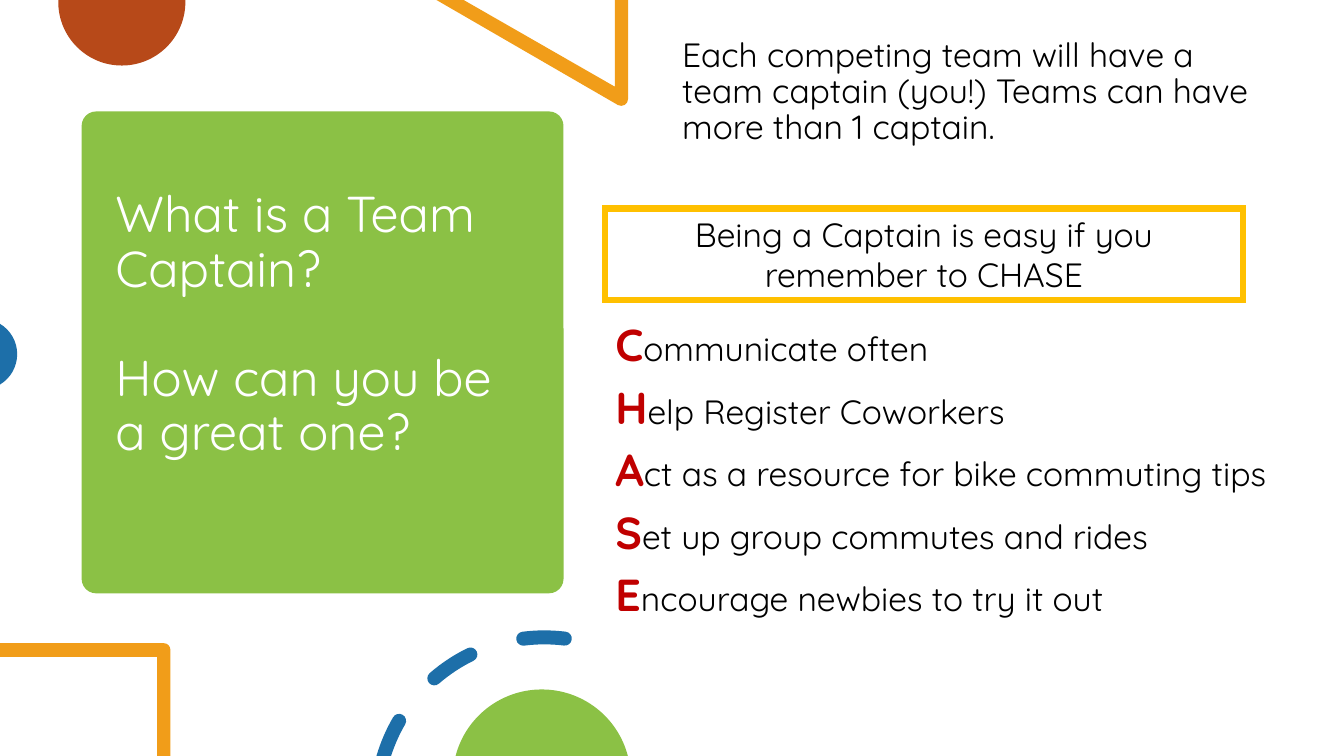
from dataclasses import dataclass
from math import cos, radians, sin, tan

from lxml import etree
from pptx import Presentation
from pptx.dml.color import RGBColor
from pptx.enum.shapes import MSO_SHAPE
from pptx.enum.text import MSO_ANCHOR, PP_ALIGN
from pptx.oxml.ns import qn
from pptx.util import Pt

RECT = MSO_SHAPE.RECTANGLE
ROUND = MSO_SHAPE.ROUNDED_RECTANGLE
TOP = MSO_ANCHOR.TOP
MIDDLE = MSO_ANCHOR.MIDDLE
CENTER = PP_ALIGN.CENTER


@dataclass(frozen=True)
class Theme:
    font: str = "Quicksand"
    green: str = "8BC145"
    rust: str = "B74919"
    orange: str = "F19D19"
    blue: str = "1D6FA9"
    gold: str = "FFC000"
    red: str = "C00000"
    white: str = "FFFFFF"
    black: str = "000000"
    title: int = 36
    cap: int = 32
    body: int = 24


THEME = Theme()
WIDE, HIGH = 960, 540
STEPS = [
    "Communicate often",
    "Help Register Coworkers",
    "Act as a resource for bike commuting tips",
    "Set up group commutes and rides",
    "Encourage newbies to try it out",
]


def rgb(color):
    return RGBColor.from_string(color)


def paint(shape, fill, line=None, width=0):
    shape.shadow.inherit = False
    shape.fill.solid()
    shape.fill.fore_color.rgb = rgb(fill)
    if line:
        shape.line.color.rgb = rgb(line)
        shape.line.width = Pt(width)
    else:
        shape.line.fill.background()


def style(font, size, color, bold=False):
    font.name = THEME.font
    font.size = Pt(size)
    font.bold = bold
    font.color.rgb = rgb(color)


def frame(slide, box, anchor=TOP):
    text = slide.shapes.add_textbox(*map(Pt, box)).text_frame
    text.word_wrap = True
    text.vertical_anchor = anchor
    return text


def spot(x, y, r, turn):
    return x + r * cos(radians(turn)), y + r * sin(radians(turn))


def arc(x, y, r, start, end, count=1):
    step = (end - start) / count
    pull = 4 / 3 * tan(radians(step / 4)) * r
    curves = []
    for i in range(count):
        a = start + i * step
        b = a + step
        (ax, ay), (bx, by) = spot(x, y, r, a), spot(x, y, r, b)
        (ux, uy), (vx, vy) = spot(0, 0, pull, a + 90), spot(0, 0, pull, b + 90)
        curves.append((ax + ux, ay + uy, bx - vx, by - vy, bx, by))
    return curves


def bend(node, curve):
    tag = etree.Element(qn("a:cubicBezTo"))
    node.addprevious(tag)
    for line in curve:
        tag.append(line[0])
        line.getparent().remove(line)


def outline(slide, box, loops, fill):
    left, top = box[:2]
    pen = None
    kinds = []
    for loop in loops:
        first, *rest = loop
        x, y = Pt(left + first[0]), Pt(top + first[1])
        if pen:
            pen.move_to(x, y)
        else:
            pen = slide.shapes.build_freeform(x, y)
        dots = []
        for part in rest:
            pairs = list(zip(part[::2], part[1::2]))
            kinds.append(len(pairs))
            dots += [(Pt(left + px), Pt(top + py)) for px, py in pairs]
        pen.add_line_segments(dots, close=True)
    shape = pen.convert_to_shape()
    paint(shape, fill)
    lines = list(shape.element.iter(qn("a:lnTo")))
    for kind in kinds:
        batch, lines = lines[:kind], lines[kind:]
        if kind == 3:
            bend(batch[0], batch)


def dash(x, y, r, half, start, end, cut=None):
    loop = [spot(x, y, r + half, start)]
    loop += arc(x, y, r + half, start, end)
    loop += arc(*spot(x, y, r, end), half, end, end + 180, 2)
    loop += arc(x, y, r - half, end, cut or start)
    if cut is None:
        loop += arc(*spot(x, y, r, start), half, start + 180, start + 360, 2)
    return loop


def decor(slide, box):
    h = box[3]
    disc = [(132.4, 0), (41.6, 0), (41.6, 1.4)] + arc(87, 1.4, 45.4, 180, 0, 2)
    outline(slide, box, [disc], THEME.rust)
    wedge = [(448.6, 0), (439.2, 0), (439.2, 61.9), (331.2, 0), (311.8, 0)]
    wedge += [(441.4, 75)] + arc(443.8, 70.8, 4.8, 120, 0, 2)
    outline(slide, box, [wedge], THEME.orange)
    dot = [(0, 231.3), (0, 274.7)] + arc(-13, 253, 25.3, 59.1, -59.1, 2)
    outline(slide, box, [dot], THEME.blue)
    hook = [(117, h - 80.6), (0, h - 80.6), (0, h - 70.8), (112.3, h - 70.8)]
    hook += [(112.3, h), (121.7, h), (121.7, h - 75.9)]
    hook += arc(117, h - 75.9, 4.7, 0, -90)
    outline(slide, box, [hook], THEME.orange)
    turns = [(196.4, 210.2, 197.9), (229.1, 243.9), (262.8, 277)]
    ring = [dash(388.8, h + 35.3, 120, 5, *turn) for turn in turns]
    outline(slide, box, ring, THEME.blue)
    dome = [spot(387, h + 16.1, 63.6, 194.7)]
    dome += arc(387, h + 16.1, 63.6, 194.7, 345.3, 2)
    outline(slide, box, [dome], THEME.green)


def panel(slide, box):
    x, y, w, h = box
    card = slide.shapes.add_shape(ROUND, *map(Pt, box))
    card.adjustments[0] = 0.03
    paint(card, THEME.green)
    text = frame(slide, (x + 17.1, y + 10.2, w - 33.8, h - 15.8), MIDDLE)
    text.text = "What is a Team Captain? \v\vHow can you be a great one?\v"
    para = text.paragraphs[0]
    para.line_spacing = 0.9
    style(para.font, THEME.title, THEME.white)


def intro(slide, box):
    text = frame(slide, box)
    text.text = (
        "Each competing team will have a team captain (you!) "
        "Teams can have more than 1 captain."
    )
    para = text.paragraphs[0]
    para.line_spacing = 0.9
    style(para.font, THEME.body, THEME.black)


def chase(slide, box):
    text = frame(slide, box)
    for i, step in enumerate(STEPS):
        para = text.add_paragraph() if i else text.paragraphs[0]
        para.line_spacing = 0.9
        para.space_before = Pt(10 if i else 0)
        cap, rest = para.add_run(), para.add_run()
        cap.text, rest.text = step[0], step[1:]
        style(cap.font, THEME.cap, THEME.red, True)
        style(rest.font, THEME.body, THEME.black)


def banner(slide, box):
    sign = slide.shapes.add_shape(RECT, *map(Pt, box))
    paint(sign, THEME.white, THEME.gold, 4.5)
    edge = next(sign.element.iter(qn("a:ln")))
    etree.SubElement(edge, qn("a:miter"), lim="800000")
    text = sign.text_frame
    text.word_wrap = True
    text.vertical_anchor = TOP
    text.text = "Being a Captain is easy if you remember to CHASE"
    para = text.paragraphs[0]
    para.alignment = CENTER
    style(para.font, THEME.body, THEME.black)


def main():
    deck = Presentation()
    deck.slide_width, deck.slide_height = Pt(WIDE), Pt(HIGH)
    slide = deck.slides.add_slide(deck.slide_layouts[6])
    panel(slide, (58.3, 79.6, 344.2, 344.2))
    decor(slide, (0, 0, WIDE, HIGH))
    intro(slide, (480.2, 23.6, 428.4, 121))
    chase(slide, (432.4, 227.2, 517.7, 244.1))
    banner(slide, (432, 149, 455.8, 65.5))
    deck.save("out.pptx")


if __name__ == "__main__":
    main()
